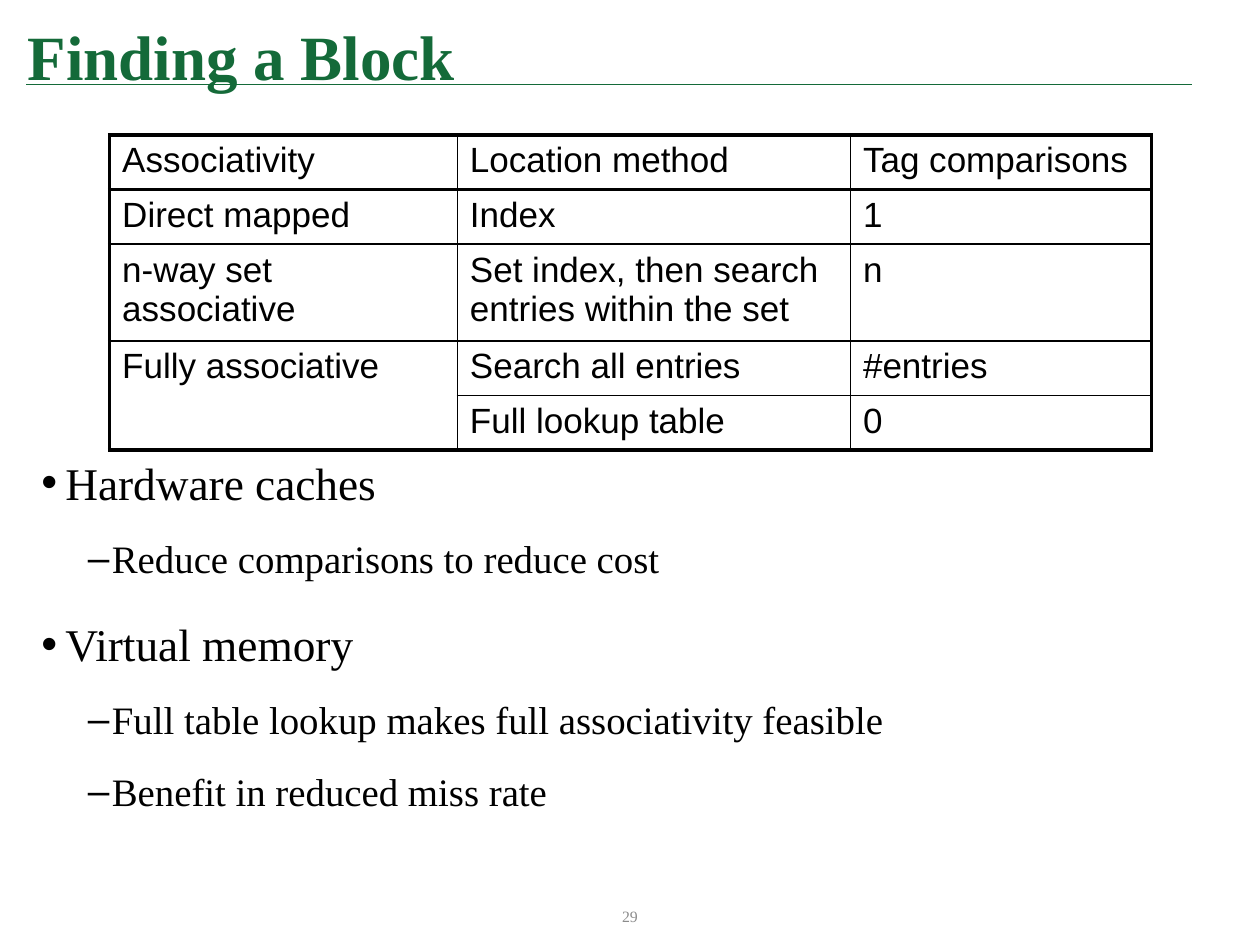
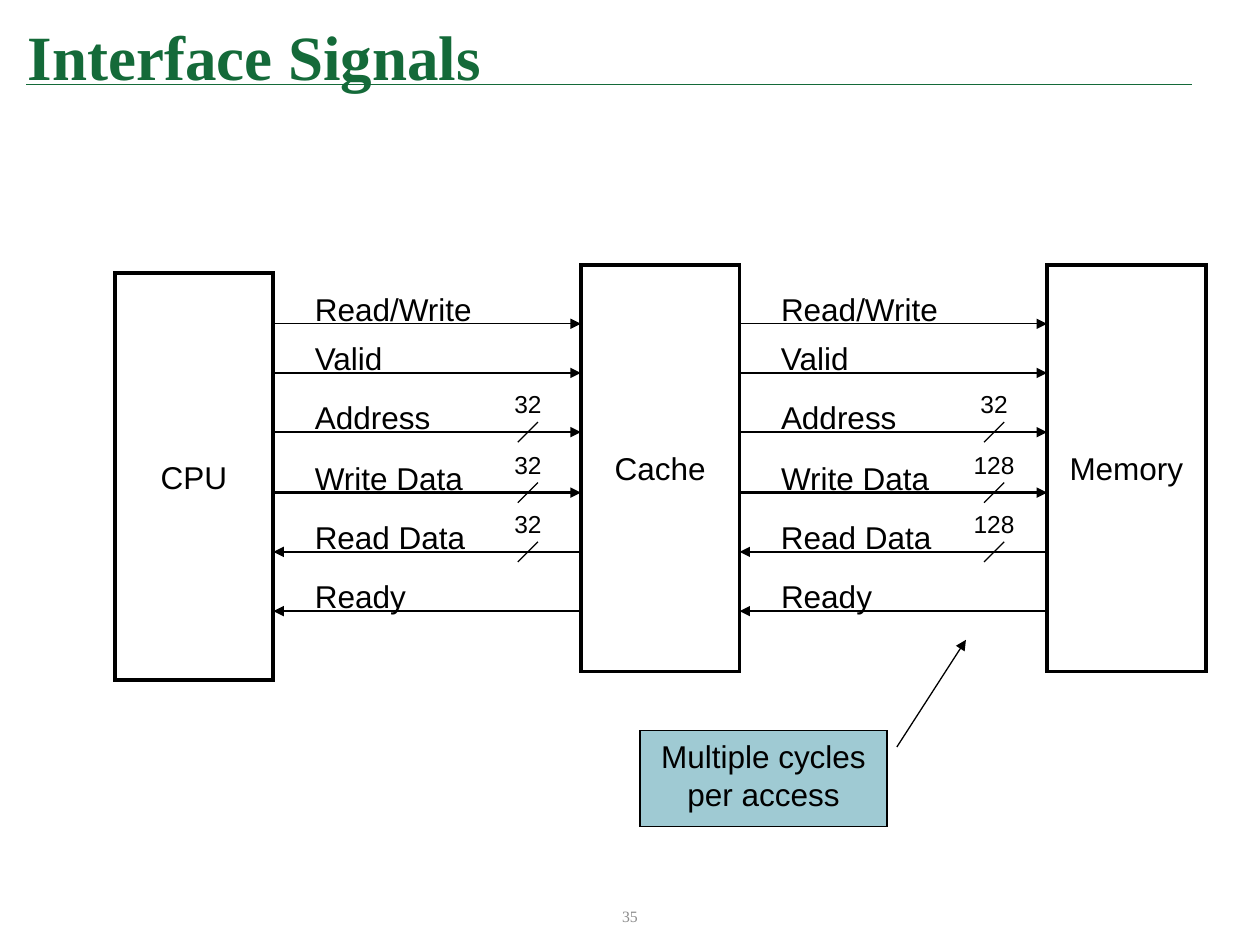
"""Build two slides on caches: finding a block, and the interface signals."""
from typing import NamedTuple

from lxml.etree import SubElement
from pptx import Presentation
from pptx.dml.color import RGBColor
from pptx.enum.shapes import MSO_CONNECTOR, MSO_SHAPE
from pptx.enum.text import MSO_ANCHOR, PP_ALIGN
from pptx.oxml import parse_xml
from pptx.oxml.ns import nsdecls, qn
from pptx.util import Inches, Pt

COLOURS = {"green": "146A39", "black": "000000", "grey": "8C8C8C", "teal": "9FCAD3"}
SERIF, SANS = "Times New Roman", "Arial"


class TextStyle(NamedTuple):
    font: str
    size: float
    colour: str = "black"
    bold: bool = False
    align: PP_ALIGN = PP_ALIGN.LEFT


class Level(NamedTuple):
    bullet: str
    margin: float
    style: TextStyle
    before: float


class Block(NamedTuple):
    name: str
    left: float
    top: float


class Signal(NamedTuple):
    name: str
    y: float
    label_width: float
    forward: bool = True
    bits: tuple = ()


TITLE = TextStyle(SERIF, 36, "green", True)
NUMBER = TextStyle(SERIF, 9, "grey", align=PP_ALIGN.CENTER)
CELL = TextStyle(SANS, 20)
LABEL = TextStyle(SANS, 18)
CENTRED = LABEL._replace(align=PP_ALIGN.CENTER)
BITS = TextStyle(SANS, 14, align=PP_ALIGN.CENTER)

LEVELS = [
    Level("•", 0.19, TextStyle(SERIF, 25.9), 7.5),
    Level("–", 0.56, TextStyle(SERIF, 22.2), 3.7),
]
HANGING = 0.19
POINTS = [
    (0, "Hardware caches"),
    (1, "Reduce comparisons to reduce cost"),
    (0, "Virtual memory"),
    (1, "Full table lookup makes full associativity feasible"),
    (1, "Benefit in reduced miss rate"),
]

COLUMN_WIDTHS = [2.76, 3.12, 2.39]
ROW_HEIGHTS = [0.37, 0.37, 0.48, 0.37, 0.37]
TABLE_HEIGHT = 2.5
METHODS = [
    ["Associativity", "Location method", "Tag comparisons"],
    ["Direct mapped", "Index", "1"],
    ["n-way set associative", "Set index, then search entries within the set", "n"],
    ["Fully associative", "Search all entries", "#entries"],
    ["", "Full lookup table", "0"],
]
MERGED = (3, 0)
OUTER, HEADER, INNER = 2.25, 1.5, 1

BLOCK_WIDTH, BLOCK_HEIGHT = 1.26, 3.23
BLOCKS = [Block("CPU", 0.91, 2.17), Block("Cache", 4.61, 2.1), Block("Memory", 8.31, 2.1)]
SIGNALS = [
    Signal("Read/Write", 2.57, 1.45),
    Signal("Valid", 2.96, 0.76),
    Signal("Address", 3.43, 1.12, bits=("32", "32")),
    Signal("Write Data", 3.91, 1.38, bits=("32", "128")),
    Signal("Read Data", 4.38, 1.4, False, ("32", "128")),
    Signal("Ready", 4.85, 0.92, False),
]


def rgb(name: str) -> RGBColor:
    """Look up a named colour."""
    return RGBColor.from_string(COLOURS[name])


def write(para, text: str, style: TextStyle) -> None:
    """Put one styled run in a paragraph."""
    para.alignment = style.align
    span = para.add_run()
    span.text = text
    values = {"name": style.font, "size": Pt(style.size), "bold": style.bold}
    for key, value in values.items():
        setattr(span.font, key, value)
    span.font.color.rgb = rgb(style.colour)


def add_text(page, text: str, at: tuple, style: TextStyle,
             anchor=MSO_ANCHOR.TOP, wrap: bool = False) -> None:
    """Add a text box holding one paragraph."""
    box = page.shapes.add_textbox(*map(Inches, at))
    frame = box.text_frame
    frame.word_wrap, frame.vertical_anchor = wrap, anchor
    write(frame.paragraphs[0], text, style)


def add_line(page, start: tuple, end: tuple, width: float,
             colour: str = "black", arrow: bool = False) -> None:
    """Add a straight line, with an arrowhead at its end if asked."""
    line = page.shapes.add_connector(MSO_CONNECTOR.STRAIGHT, *map(Inches, start + end))
    line.line.width = Pt(width)
    line.line.color.rgb = rgb(colour)
    if arrow:
        add_arrowhead(line)
    SubElement(line._element.spPr, qn("a:effectLst"))


def add_arrowhead(shape) -> None:
    """Put a triangle at the end of a shape's line."""
    SubElement(shape.line._get_or_add_ln(), qn("a:tailEnd"), type="triangle")


def add_outlined(page, kind, text: str, at: tuple, width: float, anchor, wrap: bool):
    """Add an unfilled shape with a sharp black outline and centred text."""
    shape = page.shapes.add_shape(kind, *map(Inches, at))
    shape.shadow.inherit = False
    shape.fill.background()
    shape.line.width = Pt(width)
    shape.line.color.rgb = rgb("black")
    SubElement(shape.line._get_or_add_ln(), qn("a:miter"), lim="800000")
    frame = shape.text_frame
    frame.word_wrap, frame.vertical_anchor = wrap, anchor
    write(frame.paragraphs[0], text, CENTRED)
    return shape


def add_page(deck, title: str, number: str):
    """Add a slide with its title, rule and page number."""
    page = deck.slides.add_slide(deck.slide_layouts[5])
    add_line(page, (0.21, 0.67), (9.46, 0.67), 1, "green")
    box = page.shapes.title
    for key, value in zip(("left", "top", "width", "height"), (0.12, 0.07, 9.19, 0.73)):
        setattr(box, key, Inches(value))
    box.text_frame.vertical_anchor = MSO_ANCHOR.MIDDLE
    write(box.text_frame.paragraphs[0], title, TITLE)
    add_text(page, number, (3.73, 7.07, 2.54, 0.4), NUMBER, MSO_ANCHOR.MIDDLE, True)
    return page


def add_borders(cell, row: int, column: int) -> None:
    """Draw the four borders of a cell by its place in the table."""
    last_row, last_column = len(ROW_HEIGHTS) - 1, len(COLUMN_WIDTHS) - 1
    at_bottom = row == last_row or (row, column) == MERGED
    widths = {
        "lnL": OUTER if column == 0 else INNER,
        "lnR": OUTER if column == last_column else INNER,
        "lnT": {0: OUTER, 1: HEADER}.get(row, INNER),
        "lnB": OUTER if at_bottom else HEADER if row == 0 else INNER,
    }
    properties = cell._tc.get_or_add_tcPr()
    for index, (side, width) in enumerate(widths.items()):
        properties.insert(index, parse_xml(
            f'<a:{side} {nsdecls("a")} w="{Pt(width)}"><a:solidFill>'
            f'<a:srgbClr val="{COLOURS["black"]}"/></a:solidFill></a:{side}>'))


def add_methods_table(page) -> None:
    """Add the table of location methods."""
    at = (0.87, 1.07, sum(COLUMN_WIDTHS), TABLE_HEIGHT)
    frame = page.shapes.add_table(
        len(ROW_HEIGHTS), len(COLUMN_WIDTHS), *map(Inches, at))
    table = frame.table
    table.first_row = table.horz_banding = False
    for column, width in zip(table.columns, COLUMN_WIDTHS):
        column.width = Inches(width)
    for row, height in zip(table.rows, ROW_HEIGHTS):
        row.height = Inches(height)
    frame.height = Inches(TABLE_HEIGHT)
    for r, texts in enumerate(METHODS):
        for c, text in enumerate(texts):
            cell = table.cell(r, c)
            cell.fill.background()
            add_borders(cell, r, c)
            if text:
                write(cell.text_frame.paragraphs[0], text, CELL)
    row, column = MERGED
    table.cell(row, column).merge(table.cell(row + 1, column))


def add_points(page) -> None:
    """Add the two-level bullet list."""
    box = page.shapes.add_textbox(*map(Inches, (0.23, 3.39, 9.56, 3.6)))
    frame = box.text_frame
    frame.word_wrap = True
    for index, (depth, text) in enumerate(POINTS):
        level = LEVELS[depth]
        para = frame.add_paragraph() if index else frame.paragraphs[0]
        properties = para._p.get_or_add_pPr()
        properties.set("marL", str(Inches(level.margin)))
        properties.set("indent", str(-Inches(HANGING)))
        SubElement(properties, qn("a:buFont"), typeface=SANS)
        SubElement(properties, qn("a:buChar"), char=level.bullet)
        para.level = depth
        para.line_spacing = 1.4
        para.space_before = Pt(level.before if index else 0)
        write(para, text, level.style)


def add_signal(page, signal: Signal, lane: int) -> None:
    """Add one signal arrow between two neighbouring blocks."""
    left, right = BLOCKS[lane].left + BLOCK_WIDTH, BLOCKS[lane + 1].left
    y = signal.y
    ends = [(left, y), (right, y)]
    start, end = ends if signal.forward else ends[::-1]
    add_line(page, start, end, 1.5 if signal.bits else 0.75, arrow=True)
    add_text(page, signal.name, (left + 0.23, y - 0.32, signal.label_width, 0.4), LABEL)
    if signal.bits:
        bits = signal.bits[lane]
        middle = left + 2.02
        width = 0.2 + 0.11 * len(bits)
        add_line(page, (middle - 0.08, y + 0.08), (middle + 0.08, y - 0.08), 0.75)
        add_text(page, bits, (middle - width / 2, y - 0.39, width, 0.33), BITS)


def add_callout(page) -> None:
    """Add the note that points at the memory signals."""
    note = add_outlined(page, MSO_SHAPE.LINE_CALLOUT_1, "Multiple cycles per access",
                        (5.08, 5.8, 1.96, 0.76), 0.75, MSO_ANCHOR.TOP, True)
    note.fill.solid()
    note.fill.fore_color.rgb = rgb("teal")
    for index, value in enumerate((0.17, 1.04, -0.95, 1.32)):
        note.adjustments[index] = value
    add_arrowhead(note)


def main() -> None:
    """Build and save the deck."""
    deck = Presentation()
    deck.slide_width, deck.slide_height = Inches(10), Inches(7.5)

    page = add_page(deck, "Finding a Block", "29")
    add_points(page)
    add_methods_table(page)

    page = add_page(deck, "Interface Signals", "35")
    for block in BLOCKS:
        add_outlined(page, MSO_SHAPE.RECTANGLE, block.name,
                     (block.left, block.top, BLOCK_WIDTH, BLOCK_HEIGHT),
                     2.25, MSO_ANCHOR.MIDDLE, False)
    for lane in range(len(BLOCKS) - 1):
        for signal in SIGNALS:
            add_signal(page, signal, lane)
    add_callout(page)

    deck.save("out.pptx")


if __name__ == "__main__":
    main()
